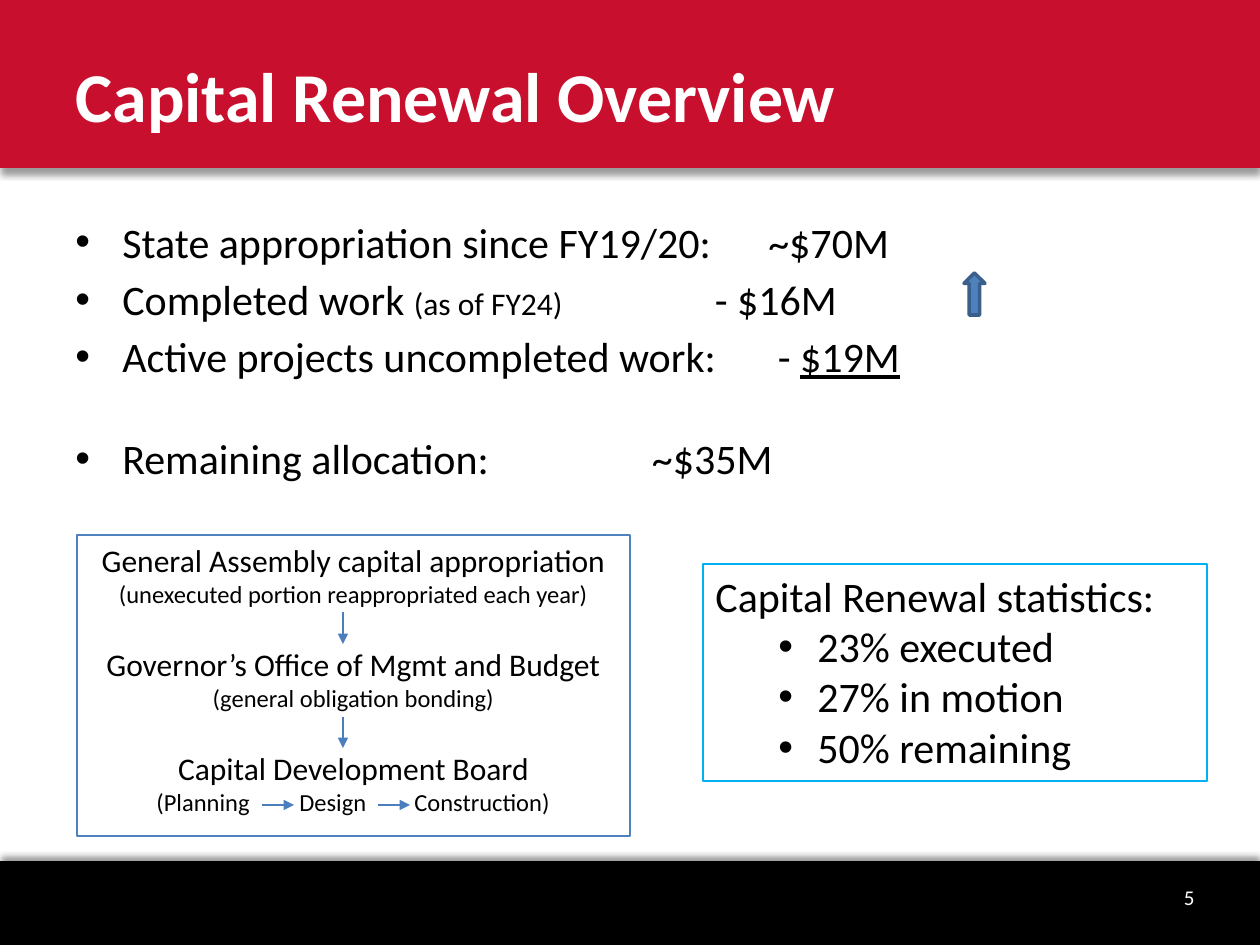
from lxml import etree
from pptx import Presentation
from pptx.dml.color import RGBColor
from pptx.enum.shapes import MSO_CONNECTOR, MSO_SHAPE
from pptx.enum.text import MSO_ANCHOR, PP_ALIGN
from pptx.oxml.ns import qn
from pptx.util import Emu, Pt

RECT, UP_ARROW = MSO_SHAPE.RECTANGLE, MSO_SHAPE.UP_ARROW
STRAIGHT = MSO_CONNECTOR.STRAIGHT
TOP, MIDDLE = MSO_ANCHOR.TOP, MSO_ANCHOR.MIDDLE
LEFT, CENTER, RIGHT = PP_ALIGN.LEFT, PP_ALIGN.CENTER, PP_ALIGN.RIGHT

COLORS = {"red": "C8102E", "black": "000000", "white": "FFFFFF", "blue": "4F81BD",
          "navy": "3A5F8C", "cyan": "00B0F0", "arrow": "4B7EBC"}
COLORS = {name: RGBColor.from_string(value) for name, value in COLORS.items()}
PX = 914400 / 126


def px(*values):
    return [Emu(round(v * PX)) for v in values]


def add_text(tf, runs, first=False, align=LEFT, before=0, bullet=None, tabs=(), color="black"):
    """Add a paragraph of (text, format) runs; bullet is (margin, hanging) in px."""
    p = tf.paragraphs[0] if first else tf.add_paragraph()
    p.alignment = align
    if before:
        p.space_before = Pt(before)
    pPr = p._p.get_or_add_pPr()
    if bullet:
        margin, hanging = px(*bullet)
        pPr.set("marL", str(margin))
        pPr.set("indent", str(-hanging))
        etree.SubElement(pPr, qn("a:buFont"), typeface="Arial")
        etree.SubElement(pPr, qn("a:buChar"), char="•")
    if tabs:
        tab_list = etree.SubElement(pPr, qn("a:tabLst"))
        for pos in px(*tabs):
            etree.SubElement(tab_list, qn("a:tab"), pos=str(pos), algn="l")
    for text, fmt in runs:
        r = p.add_run()
        r.text = text
        r.font.name = "Calibri"
        r.font.color.rgb = COLORS[color]
        for key, value in fmt.items():
            setattr(r.font, key, value)


prs = Presentation()
prs.slide_width, prs.slide_height = px(1260, 945)
s = prs.slides.add_slide(prs.slide_layouts[5])

# Header and footer bars, each with a shadow towards the middle
for top, height, color, angle in [(861, 84, "black", 270), (0, 168, "red", 90)]:
    sp = s.shapes.add_shape(RECT, *px(0, top, 1260, height))
    sp.fill.solid()
    sp.fill.fore_color.rgb = COLORS[color]
    sp.line.fill.background()
    sp.shadow.inherit = False
    shadow = etree.SubElement(sp._element.spPr.find(qn("a:effectLst")), qn("a:outerShdw"),
                              blurRad=str(Pt(4)), dist=str(Pt(3)), dir=str(angle * 60000),
                              rotWithShape="0")
    shade = etree.SubElement(shadow, qn("a:srgbClr"), val="000000")
    etree.SubElement(shade, qn("a:alpha"), val="40000")

# Title, brought in front of the red bar
title = s.shapes.title
title.left, title.top, title.width, title.height = px(63, 21, 1039, 147)
title.text_frame.vertical_anchor = MIDDLE
add_text(title.text_frame, [("Capital Renewal Overview", {"size": Pt(40), "bold": True})],
         first=True, color="white")
s.shapes._spTree.append(title._element)

# Budget lines
big = {"size": Pt(24)}
budget = [
    (0, [("State appropriation since FY19/20:\t~$70M", big)]),
    (4, [("Completed work ", big), ("(as of FY24)", {"size": Pt(18)}), ("\t\t\t - $16M", big)]),
    (4, [("Active projects uncompleted work:\t - ", big),
         ("$19M", {"size": Pt(24), "underline": True})]),
    (29.5, [("Remaining allocation:\t\t\t ~$35M", big)]),
]
tf = s.shapes.add_textbox(*px(63, 210, 1081, 301)).text_frame
tf.word_wrap = True
for i, (before, runs) in enumerate(budget):
    add_text(tf, runs, first=i == 0, before=before, bullet=(47, 47))

# Slide number
tf = s.shapes.add_textbox(*px(1018, 872, 189, 50)).text_frame
tf.word_wrap = True
tf.vertical_anchor = MIDDLE
add_text(tf, [("5", {"size": Pt(12)})], first=True, align=RIGHT, color="white")

# Upward marker beside the completed amount
sp = s.shapes.add_shape(UP_ARROW, *px(964, 273, 21, 42))
sp.shadow.inherit = False
sp.fill.solid()
sp.fill.fore_color.rgb = COLORS["blue"]
sp.line.color.rgb = COLORS["navy"]
sp.line.width = Pt(2)

# Outlined boxes
frames = []
for box, color in [((703, 564, 504, 217), "cyan"), ((77, 535, 553, 301), "blue")]:
    sp = s.shapes.add_shape(RECT, *px(*box))
    sp.shadow.inherit = False
    sp.fill.background()
    sp.line.color.rgb = COLORS[color]
    sp.line.width = Pt(0.75)
    sp.text_frame.word_wrap = True
    sp.text_frame.vertical_anchor = TOP
    frames.append(sp.text_frame)
stats, flow = frames

add_text(stats, [("Capital Renewal statistics:", big)], first=True)
for text in ["23% executed", "27% in motion", "50% remaining"]:
    add_text(stats, [(text, big)], bullet=(102, 39))

# Funding flow: a heading and a detail line per step
steps = [
    ("General Assembly capital appropriation", "(unexecuted portion reappropriated each year)", ()),
    ("Governor’s Office of Mgmt and Budget", "(general obligation bonding)", ()),
    ("Capital Development Board", "\t(Planning\tDesign\tConstruction)", (67, 210, 325)),
]
for i, (heading, detail, tabs) in enumerate(steps):
    add_text(flow, [(heading, {"size": Pt(18)})], first=i == 0, align=CENTER,
             before=21 if i else 0)
    add_text(flow, [(detail, {"size": Pt(14)})], align=LEFT if tabs else CENTER, tabs=tabs)

# Flow arrows
for ends in [(343, 612, 343, 644), (343, 717, 343, 748),
             (262, 805, 294, 805), (378, 805, 410, 805)]:
    line = s.shapes.add_connector(STRAIGHT, *px(*ends))
    line.line.color.rgb = COLORS["arrow"]
    line.line.width = Pt(0.75)
    etree.SubElement(line.line._get_or_add_ln(), qn("a:tailEnd"), type="triangle")
    etree.SubElement(line._element.spPr, qn("a:effectLst"))

prs.save("out.pptx")
